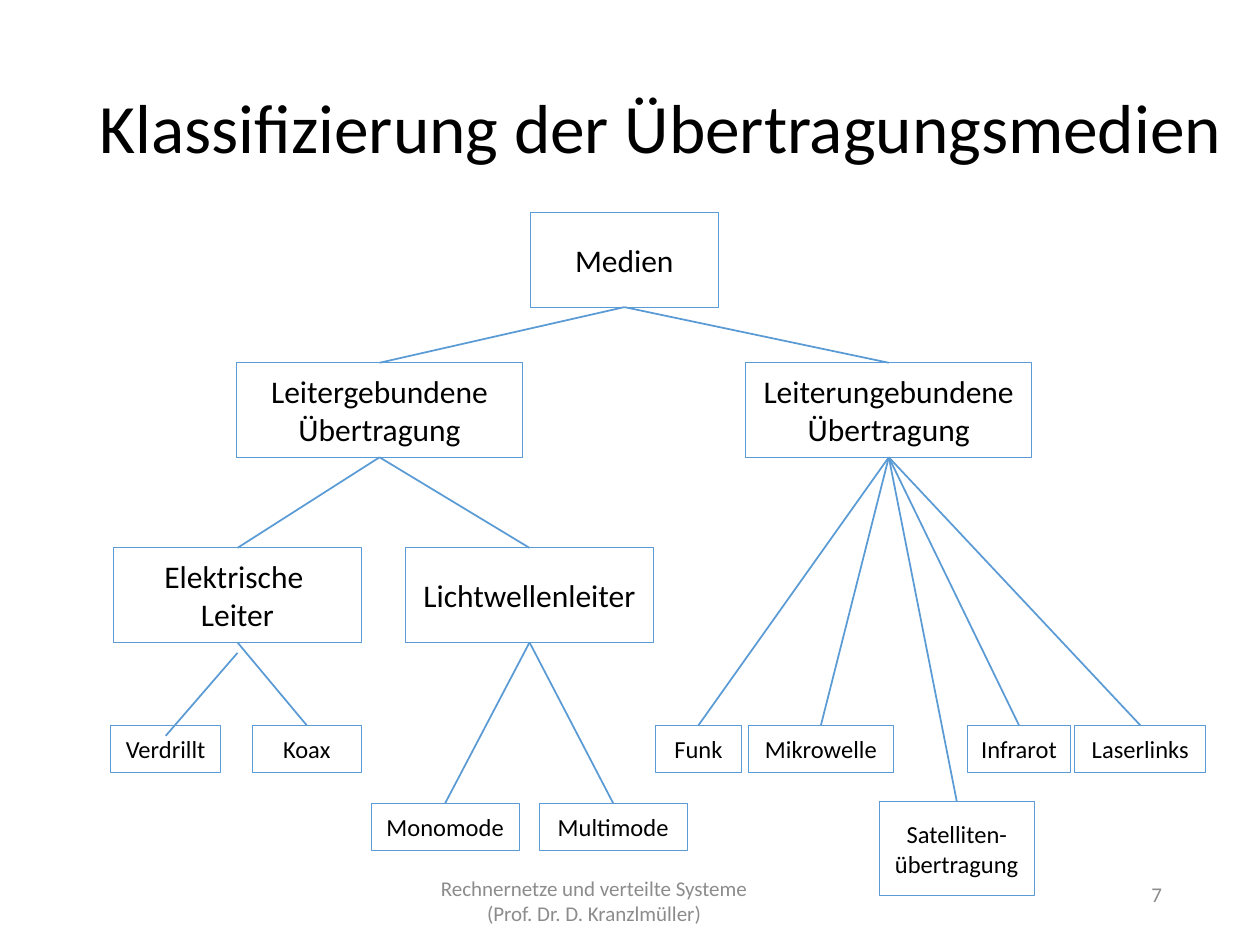
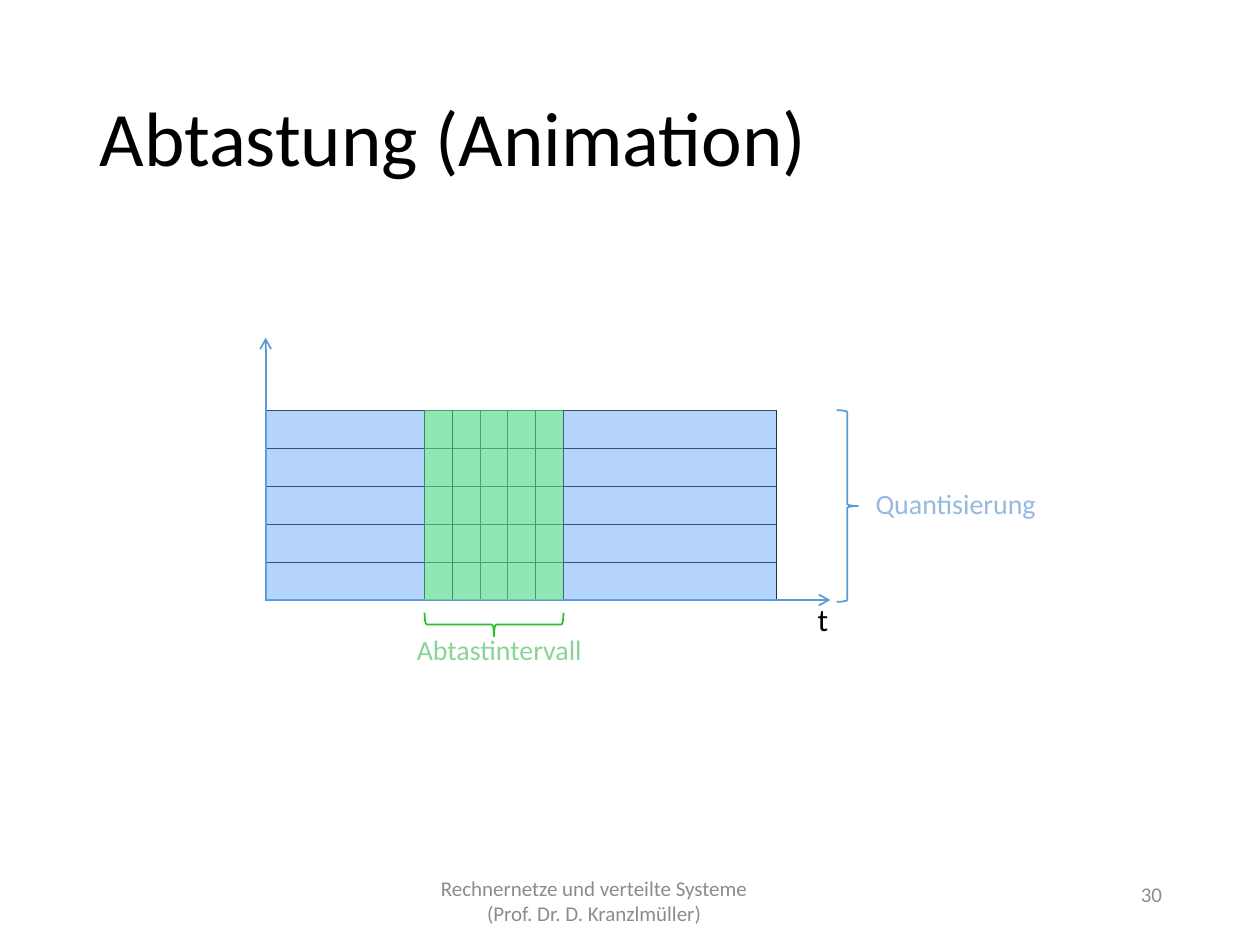
from collections import namedtuple
from itertools import accumulate

from lxml.etree import SubElement
from pptx import Presentation
from pptx.dml.color import RGBColor
from pptx.enum.shapes import MSO_CONNECTOR, MSO_SHAPE
from pptx.enum.text import MSO_ANCHOR, MSO_AUTO_SIZE, PP_ALIGN
from pptx.oxml.ns import qn
from pptx.util import Pt

BLACK = RGBColor(0x00, 0x00, 0x00)
WHITE = RGBColor(0xFF, 0xFF, 0xFF)
GREY = RGBColor(0x8C, 0x8C, 0x8C)
BLUE = RGBColor(0x5B, 0x9B, 0xD5)
LEVEL_BLUE = RGBColor(0x61, 0xA4, 0xF7)
SAMPLE_GREEN = RGBColor(0x66, 0xFF, 0x66)
BRACE_GREEN = RGBColor(0x29, 0xC0, 0x2E)
LABEL_BLUE = RGBColor(0x96, 0xBA, 0xDF)
LABEL_GREEN = RGBColor(0x8C, 0xD3, 0x97)
FONT = "Calibri"

Box = namedtuple("Box", "left top width height")
Node = namedtuple("Node", "parent left top width height size text")

TITLE_ONLY = 5
FOOTER_BOX = Box(238.3, 500.4, 243.4, 28.8)
NUMBER_BOX = Box(600.5, 500.4, 70.6, 21.6)
FOOTER_LINES = ["Rechnernetze und verteilte Systeme", "(Prof. Dr. D. Kranzlmüller)"]
FOOTER_SHIFT = 41

GROUP_TOP, KIND_TOP, LEAF_TOP, LOW_TOP = 85.8, 191.6, 293, 337.5
TALL, FLAT = 54, 26.8
MEDIA = {
    "media": Node(None, 240, 0, 107.6, TALL, 18, ["Medien"]),
    "unbound": Node("media", 363.2, GROUP_TOP, 163.4, TALL, 18, ["Leiterungebundene Übertragung"]),
    "bound": Node("media", 72.2, GROUP_TOP, 163.4, TALL, 18, ["Leitergebundene Übertragung"]),
    "fibre": Node("bound", 168.7, KIND_TOP, 141.8, TALL, 18, ["Lichtwellenleiter"]),
    "electric": Node("bound", 1.8, KIND_TOP, 141.8, TALL, 18, ["Elektrische ", "Leiter"]),
    "radio": Node("unbound", 311.5, LEAF_TOP, 49.2, FLAT, 14, ["Funk"]),
    "satellite": Node("unbound", 439.5, 336.5, 88.5, TALL, 14, ["Satelliten-übertragung"]),
    "microwave": Node("unbound", 364.7, LEAF_TOP, 82.8, FLAT, 14, ["Mikrowelle"]),
    "infrared": Node("unbound", 489.8, LEAF_TOP, 59, FLAT, 14, ["Infrarot"]),
    "laser": Node("unbound", 551.2, LEAF_TOP, 74.9, FLAT, 14, ["Laserlinks"]),
    "twisted": Node("electric", 0.4, LEAF_TOP, 62.6, FLAT, 14, ["Verdrillt"]),
    "coax": Node("electric", 81, LEAF_TOP, 62.6, FLAT, 14, ["Koax"]),
    "monomode": Node("fibre", 149.2, LOW_TOP, 84.4, FLAT, 14, ["Monomode"]),
    "multimode": Node("fibre", 245.2, LOW_TOP, 84.4, FLAT, 14, ["Multimode"]),
}
LINE_DROPS = {"twisted": 6}
BOTTOM_SITE, TOP_SITE = 2, 0

LEVELS = 5
SAMPLES = 5
SAMPLE_WIDTH = 15.88
BEFORE_WIDTH = 90.8


def points(values):
    return [Pt(value) for value in values]


def set_values(target, values):
    for name, value in values.items():
        setattr(target, name, value)


def write(frame, lines, size, color, align=PP_ALIGN.LEFT, anchor=MSO_ANCHOR.TOP):
    frame.vertical_anchor = anchor
    for index, line in enumerate(lines):
        para = frame.add_paragraph() if index else frame.paragraphs[0]
        para.alignment = align
        span = para.add_run()
        span.text = line
        set_values(span.font, {"name": FONT, "size": Pt(size)})
        span.font.color.rgb = color


def add_text(page, box, lines, size, color, wrap=True, **layout):
    frame = page.shapes.add_textbox(*points(box)).text_frame
    frame.word_wrap = wrap
    write(frame, lines, size, color, **layout)
    return frame


def add_block(page, kind, box, fill=None, line=None, weight=0.5, alpha=None):
    block = page.shapes.add_shape(kind, *points(box))
    block.shadow.inherit = False
    if fill is None:
        block.fill.background()
    else:
        block.fill.solid()
        block.fill.fore_color.rgb = fill
    if alpha is not None:
        color = block.fill._xPr.find(qn("a:solidFill"))[0]
        SubElement(color, qn("a:alpha"), val=str(alpha * 1000))
    if line is None:
        block.line.fill.background()
    else:
        block.line.color.rgb = line
        block.line.width = Pt(weight)
    return block


def add_line(page, start, end, arrow=False):
    line = page.shapes.add_connector(MSO_CONNECTOR.STRAIGHT, *points(start + end))
    line.line.color.rgb = BLUE
    line.line.width = Pt(1)
    properties = line._element.spPr
    if arrow:
        SubElement(properties.find(qn("a:ln")), qn("a:tailEnd"), type="arrow")
    SubElement(properties, qn("a:effectLst"))
    return line


def add_page(deck, title, title_box, title_size, number):
    page = deck.slides.add_slide(deck.slide_layouts[TITLE_ONLY])
    heading = page.shapes.title
    set_values(heading, dict(zip(Box._fields, points(title_box))))
    frame = heading.text_frame
    set_values(frame, {"word_wrap": True, "auto_size": MSO_AUTO_SIZE.NONE})
    write(frame, [title], title_size, BLACK, anchor=MSO_ANCHOR.MIDDLE)
    frame.paragraphs[0].line_spacing = 0.9

    footer = add_text(page, FOOTER_BOX, FOOTER_LINES, 12, GREY,
                      align=PP_ALIGN.CENTER, anchor=MSO_ANCHOR.MIDDLE)
    footer.paragraphs[0]._p.get_or_add_pPr().set("marR", str(Pt(FOOTER_SHIFT)))
    add_text(page, NUMBER_BOX, [number], 12, GREY, align=PP_ALIGN.RIGHT)
    return page


def draw_media_tree(page, left, top):
    blocks = {}
    for name, node in MEDIA.items():
        box = Box(left + node.left, top + node.top, node.width, node.height)
        block = add_block(page, MSO_SHAPE.RECTANGLE, box, line=BLUE)
        set_values(block.text_frame,
                   {"word_wrap": True, "margin_left": Pt(5), "margin_right": Pt(5)})
        write(block.text_frame, node.text, node.size, BLACK,
              PP_ALIGN.CENTER, MSO_ANCHOR.MIDDLE)
        blocks[name] = block

    for name, node in MEDIA.items():
        if node.parent is None:
            continue
        parent = MEDIA[node.parent]
        drop = LINE_DROPS.get(name, 0)
        start = (left + parent.left + parent.width / 2,
                 top + parent.top + parent.height + drop)
        end = (left + node.left + node.width / 2, top + node.top + drop)
        line = add_line(page, start, end)
        if not drop:
            line.begin_connect(blocks[node.parent], BOTTOM_SITE)
            line.end_connect(blocks[name], TOP_SITE)


def draw_sampling_grid(page, grid):
    left, top, width, height = grid
    bottom = top + height
    level = height / LEVELS
    after_width = width - BEFORE_WIDTH - SAMPLES * SAMPLE_WIDTH
    widths = [BEFORE_WIDTH] + [SAMPLE_WIDTH] * SAMPLES + [after_width]
    edges = list(accumulate(widths, initial=left))
    rows = [top + index * level for index in range(LEVELS)]

    for cell_left, cell_width in zip(edges, widths):
        for row in rows:
            add_block(page, MSO_SHAPE.RECTANGLE, Box(cell_left, row, cell_width, level),
                      WHITE, BLACK)
    add_line(page, (left, bottom), (left, top - 41.5), arrow=True)
    add_line(page, (left - 0.6, bottom), (left + 322.7, bottom), arrow=True)
    for row in rows:
        add_block(page, MSO_SHAPE.RECTANGLE, Box(left, row, width, level),
                  LEVEL_BLUE, alpha=47)
    for sample_left in edges[1:SAMPLES + 1]:
        add_block(page, MSO_SHAPE.RECTANGLE, Box(sample_left, top, SAMPLE_WIDTH, height),
                  SAMPLE_GREEN, alpha=47)


def draw_grid_labels(page, grid):
    left, top, width, height = grid
    add_block(page, MSO_SHAPE.RIGHT_BRACE, Box(left + 326.3, top, 12.2, height + 1),
              line=BLUE, weight=1)
    span, depth = SAMPLES * SAMPLE_WIDTH, 13.7
    center = left + BEFORE_WIDTH + span / 2
    middle = top + height + 14
    brace = add_block(page, MSO_SHAPE.RIGHT_BRACE,
                      Box(center - depth / 2, middle - span / 2, depth, span),
                      line=BRACE_GREEN, weight=1)
    brace.rotation = 90

    labels = [
        ("Quantisierung", Box(341.4, 39.9, 107.3, 26.6), 16, LABEL_BLUE),
        ("Abtastintervall", Box(79.3, 123.4, 110.9, 26.6), 16, LABEL_GREEN),
        ("t", Box(308.3, 104.7, 20.9, 29), 18, BLACK),
    ]
    for text, box, size, color in labels:
        place = box._replace(left=left + box.left, top=top + box.top)
        add_text(page, place, [text], size, color, wrap=False)


def main():
    deck = Presentation()
    set_values(deck, {"slide_width": Pt(720), "slide_height": Pt(540)})

    page = add_page(deck, "Klassifizierung der Übertragungsmedien",
                    Box(49.7, 28.8, 658.8, 92.2), 39.6, "7")
    draw_media_tree(page, 63, 121.5)

    page = add_page(deck, "Abtastung (Animation)",
                    Box(49.7, 28.8, 620.6, 104.4), 44, "30")
    grid = Box(151.8, 234.4, 292, 108.5)
    draw_sampling_grid(page, grid)
    draw_grid_labels(page, grid)

    deck.save("out.pptx")


if __name__ == "__main__":
    main()
